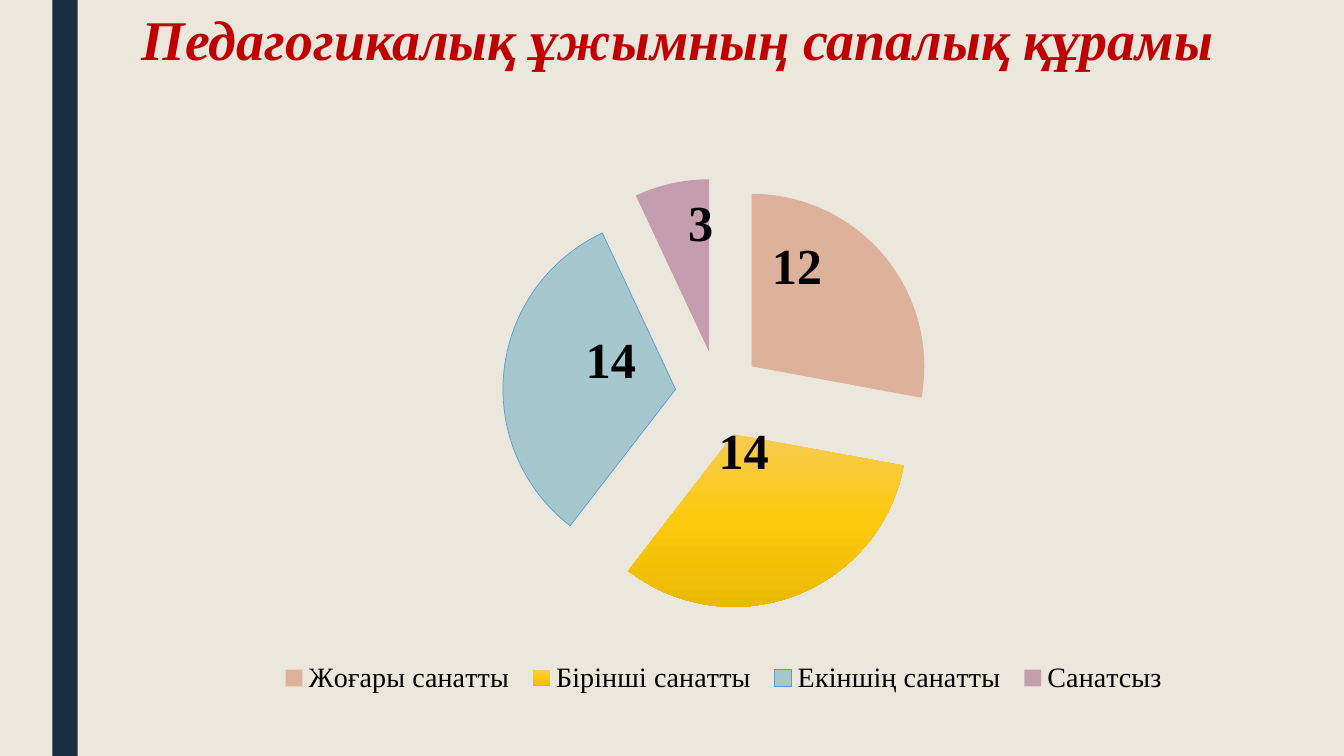
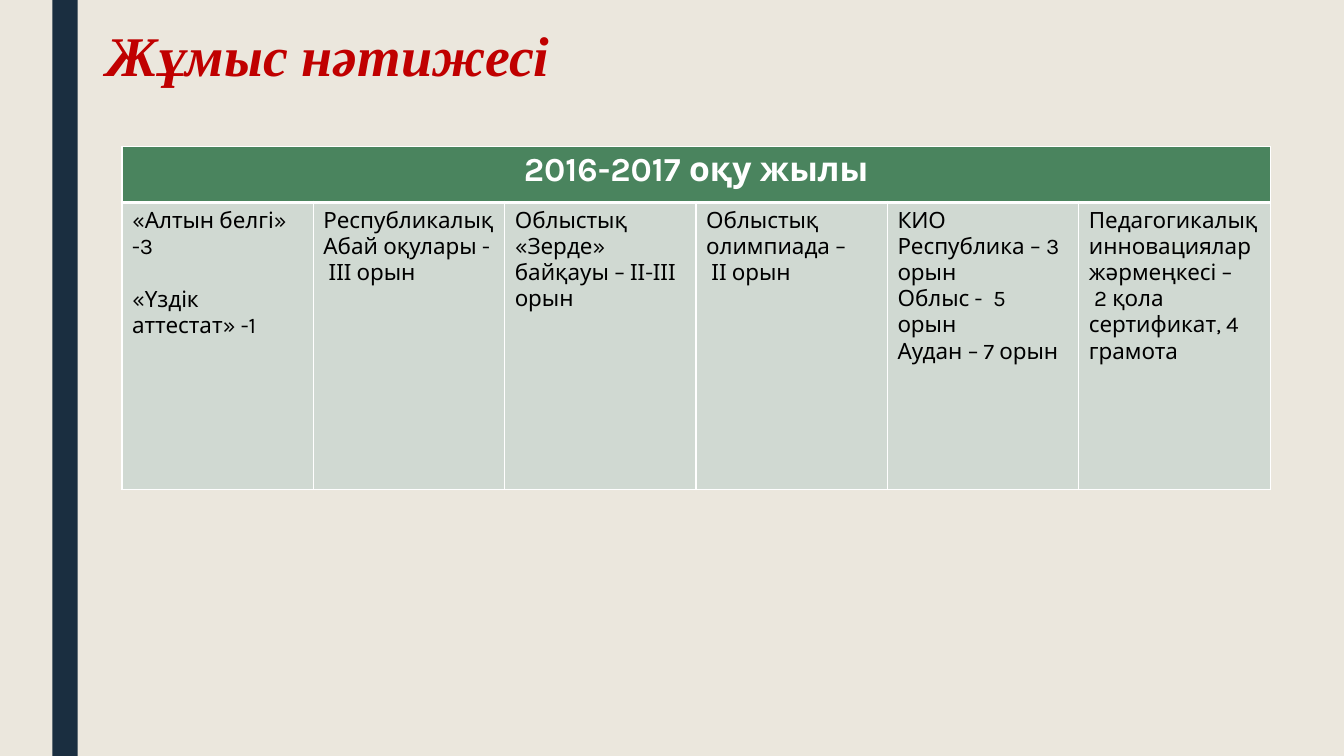
"""Builds two school report slides: a staff category pie and a results table."""
from dataclasses import dataclass

from lxml.etree import SubElement
from pptx import Presentation
from pptx.chart.data import CategoryChartData
from pptx.dml.color import RGBColor
from pptx.enum.chart import XL_CHART_TYPE, XL_LABEL_POSITION, XL_LEGEND_POSITION
from pptx.enum.shapes import MSO_SHAPE
from pptx.enum.text import PP_ALIGN
from pptx.oxml import parse_xml
from pptx.oxml.ns import nsdecls, qn
from pptx.util import Inches, Pt


@dataclass(frozen=True)
class Theme:
    background: str = "EBE7DD"
    band: str = "1A2E40"
    title: str = "C00000"
    text: str = "000000"
    white: str = "FFFFFF"
    header: str = "4A845E"
    cell: str = "D0D9D2"
    outline: str = "5B9BD5"
    serif: str = "Times New Roman"
    sans: str = "Karla"
    title_size: int = 40
    label_size: int = 36
    header_size: int = 24
    legend_size: int = 20
    body_size: int = 16
    chart_size: int = 10


T = Theme()

STAFF_TITLE = "Педагогикалық ұжымның сапалық құрамы"
STAFF = [
    ("Жоғары санатты", 12, "DEB19B", (-0.02, -0.07)),
    ("Бірінші санатты", 14, ("F6CB51", "FDCA0D", "EAB902"), (-0.02, -0.1)),
    ("Екіншің санатты", 14, "A5C7CD", (0.02, -0.03)),
    ("Санатсыз", 3, "C49DAE", (0.01, -0.07)),
]
EXPLOSION = 25
PLOT_BOX = {"x": 0.31, "y": 0.12, "w": 0.41, "h": 0.7}
LEGEND_BOX = {"x": 0.09, "y": 0.89, "w": 0.86, "h": 0.07}

RESULTS_TITLE = "Жұмыс нәтижесі"
RESULTS_HEADER = "2016-2017 оқу жылы"
RESULTS = [
    ["«Алтын белгі» -3", "«Үздік аттестат» -1"],
    ["Республикалық Абай оқулары -  ІІІ орын"],
    ["Облыстық «Зерде» байқауы – ІІ-ІІІ орын"],
    ["Облыстық олимпиада –", " ІІ орын"],
    ["КИО", "Республика – 3 орын", "Облыс -  5 орын", "Аудан – 7 орын"],
    ["Педагогикалық инновациялар жәрмеңкесі –", " 2 қола сертификат, 4 грамота"],
]
ROW_HEIGHTS = (0.56, 2.85)
TABLE_WIDTH = 11.39


def rgb(color):
    return RGBColor.from_string(color)


def style_font(font, name, size, color, bold=False, italic=False):
    font.name, font.size = name, Pt(size)
    font.bold, font.italic = bold, italic
    font.color.rgb = rgb(color)


def add_base(prs, title, left, top, width, align=PP_ALIGN.LEFT):
    s = prs.slides.add_slide(prs.slide_layouts[6])
    band = s.shapes.add_shape(MSO_SHAPE.RECTANGLE, Inches(0.52), 0, Inches(0.25), prs.slide_height)
    band.shadow.inherit = False
    band.fill.solid()
    band.fill.fore_color.rgb = rgb(T.band)
    band.line.fill.background()
    box = s.shapes.add_textbox(Inches(left), Inches(top), Inches(width), Inches(0.77))
    tf = box.text_frame
    tf.word_wrap = False
    p = tf.paragraphs[0]
    p.alignment = align
    r = p.add_run()
    r.text = title
    style_font(r.font, T.serif, T.title_size, T.title, bold=True, italic=True)
    return s


def manual_layout(box, modes):
    layout = parse_xml(f"<c:layout {nsdecls('c')}/>")
    manual = SubElement(layout, qn("c:manualLayout"))
    for tag, value in {**modes, **box}.items():
        SubElement(manual, qn(f"c:{tag}")).set("val", str(value))
    return layout


def replace_layout(parent, layout, index):
    for old in parent.findall(qn("c:layout")):
        parent.remove(old)
    parent.insert(index, layout)


def fill_point(fmt, color):
    if isinstance(color, str):
        fmt.fill.solid()
        fmt.fill.fore_color.rgb = rgb(color)
        return
    fmt.fill.gradient()
    grad = fmt.fill._xPr.find(qn("a:gradFill"))
    stops = "".join(
        f'<a:gs pos="{i * 50000}"><a:srgbClr val="{c}"/></a:gs>' for i, c in enumerate(color)
    )
    grad.getparent().replace(grad, parse_xml(
        f'<a:gradFill {nsdecls("a")} rotWithShape="1"><a:gsLst>{stops}</a:gsLst>'
        '<a:lin ang="5400000" scaled="0"/></a:gradFill>'
    ))


def add_staff_chart(s):
    data = CategoryChartData()
    data.categories = [name for name, *_ in STAFF]
    data.add_series("Series 1", [value for _, value, *_ in STAFF])
    chart = s.shapes.add_chart(
        XL_CHART_TYPE.PIE, Inches(1.75), Inches(1), Inches(10.44), Inches(6.19), data
    ).chart
    chart.has_title = False
    style_font(chart.font, T.sans, T.chart_size, T.text)
    chart.has_legend = True
    legend = chart.legend
    legend.position = XL_LEGEND_POSITION.BOTTOM
    legend.include_in_layout = False
    style_font(legend.font, T.serif, T.legend_size, T.text)
    edges = {"xMode": "edge", "yMode": "edge"}
    replace_layout(legend._element, manual_layout(LEGEND_BOX, edges), 1)
    plot_area = chart._chartSpace.chart.plotArea
    replace_layout(plot_area, manual_layout(PLOT_BOX, {"layoutTarget": "inner", **edges}), 0)

    plot = chart.plots[0]
    plot.vary_by_categories = True
    series = plot.series[0]
    labels = series.data_labels
    labels.show_value = True
    labels.position = XL_LABEL_POSITION.CENTER
    style_font(labels.font, T.serif, T.label_size, T.text, bold=True)
    for i, (_, _, color, (dx, dy)) in enumerate(STAFF):
        point = series.points[i]
        fill_point(point.format, color)
        point.format.line.fill.background()
        label = point.data_label
        style_font(label.font, T.serif, T.label_size, T.text, bold=True)
        label.position = XL_LABEL_POSITION.CENTER
        replace_layout(label._dLbl, manual_layout({"x": dx, "y": dy}, {}), 1)
    line = series.points[2].format.line
    line.color.rgb = rgb(T.outline)
    line.width = Pt(0.5)
    explosion = parse_xml(f'<c:explosion {nsdecls("c")} val="{EXPLOSION}"/>')
    series._element.find(qn("c:dPt")).addprevious(explosion)


def style_cell(cell, color, top, bottom):
    tc_pr = cell._tc.get_or_add_tcPr()
    for side, width in {"L": 1, "R": 1, "T": top, "B": bottom}.items():
        tc_pr.append(parse_xml(
            f'<a:ln{side} {nsdecls("a")} w="{Pt(width)}"><a:solidFill>'
            f'<a:srgbClr val="{T.white}"/></a:solidFill></a:ln{side}>'
        ))
    cell.fill.solid()
    cell.fill.fore_color.rgb = rgb(color)


def write_cell(cell, lines, size, color, bold=False, align=PP_ALIGN.LEFT):
    tf = cell.text_frame
    for i, line in enumerate(lines):
        p = tf.add_paragraph() if i else tf.paragraphs[0]
        p.alignment = align
        r = p.add_run()
        r.text = line
        style_font(r.font, T.sans, size, color, bold)


def add_results_table(s):
    count = len(RESULTS)
    table = s.shapes.add_table(
        2, count, Inches(1.21), Inches(1.45), Inches(TABLE_WIDTH), Inches(sum(ROW_HEIGHTS))
    ).table
    table.first_row = table.horz_banding = False
    for row, height in zip(table.rows, ROW_HEIGHTS):
        row.height = Inches(height)
    for i, lines in enumerate(RESULTS):
        table.columns[i].width = Inches(TABLE_WIDTH / count)
        style_cell(table.cell(0, i), T.header, 1, 3)
        style_cell(table.cell(1, i), T.cell, 3, 1)
        write_cell(table.cell(1, i), lines, T.body_size, T.text)
    table.cell(1, 0).text_frame.paragraphs[1].space_before = Pt(19)
    header = table.cell(0, 0)
    header.merge(table.cell(0, count - 1))
    write_cell(header, [RESULTS_HEADER], T.header_size, T.white, True, PP_ALIGN.CENTER)


def main():
    prs = Presentation()
    prs.slide_width, prs.slide_height = Inches(13.33), Inches(7.5)
    background = prs.slide_master.background.fill
    background.solid()
    background.fore_color.rgb = rgb(T.background)
    add_staff_chart(add_base(prs, STAFF_TITLE, 1.25, 0, 10.94, PP_ALIGN.CENTER))
    add_results_table(add_base(prs, RESULTS_TITLE, 0.96, 0.15, 4.64))
    prs.save("out.pptx")


if __name__ == "__main__":
    main()
